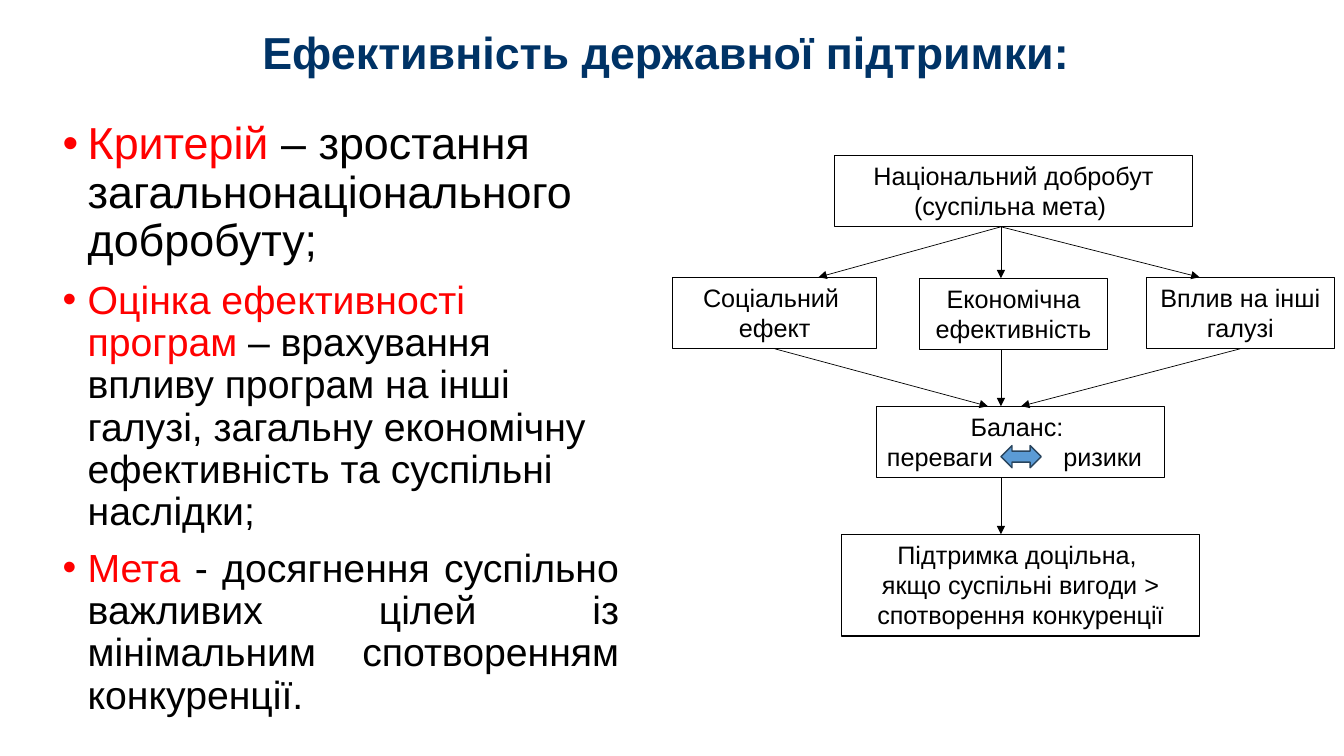
from dataclasses import dataclass

from lxml import etree
from pptx import Presentation
from pptx.dml.color import RGBColor
from pptx.enum.shapes import MSO_CONNECTOR, MSO_SHAPE
from pptx.enum.text import MSO_ANCHOR, MSO_AUTO_SIZE, PP_ALIGN
from pptx.oxml.ns import qn
from pptx.util import Inches, Pt

LEFT, CENTER, JUSTIFY = PP_ALIGN.LEFT, PP_ALIGN.CENTER, PP_ALIGN.JUSTIFY
TOP, MIDDLE = MSO_ANCHOR.TOP, MSO_ANCHOR.MIDDLE
RECTANGLE, DOUBLE_ARROW = MSO_SHAPE.RECTANGLE, MSO_SHAPE.LEFT_RIGHT_ARROW
STRAIGHT = MSO_CONNECTOR.STRAIGHT
FIXED_SIZE = MSO_AUTO_SIZE.NONE

FONT = "Arial"
NAVY, RED, BLACK = "003366", "FF0000", "000000"
BLUE, DARK_BLUE = "5B9BD5", "28445D"

# The grid has square cells, ten to the inch.
COLUMNS, ROWS = 133.33, 75
SPINE = 99.3


@dataclass(frozen=True)
class Area:
    column: float
    row: float
    width: float
    height: float

    @property
    def bottom(self) -> float:
        return self.row + self.height

    @property
    def middle(self) -> float:
        return self.column + self.width / 2


@dataclass(frozen=True)
class Line:
    text: str
    align: PP_ALIGN = CENTER
    tab: float = 0


@dataclass(frozen=True)
class Box:
    area: Area
    lines: tuple[Line, ...]


@dataclass(frozen=True)
class Point:
    lead: str
    rest: str
    size: int
    align: PP_ALIGN = LEFT


@dataclass(frozen=True)
class Arrow:
    start: float
    source: Box
    end: float
    target: Box


WELFARE = Box(Area(82.8, 15.4, 35.5, 7.1),
              (Line("Національний добробут (суспільна мета) "),))
SOCIAL = Box(Area(66.7, 27.5, 20.3, 7.1), (Line("Соціальний "), Line("ефект")))
ECONOMIC = Box(Area(91.2, 27.6, 18.7, 7.1), (Line("Економічна ефективність"),))
SECTORS = Box(Area(113.7, 27.5, 18.7, 7.1), (Line("Вплив на інші галузі"),))
BALANCE = Box(Area(87, 40.3, 28.5, 7.1),
              (Line("Баланс: "), Line("переваги\tризики", LEFT, tab=17.5)))
DECISION = Box(Area(83.5, 53, 35.5, 10.1),
               (Line("Підтримка доцільна, "),
                Line("якщо суспільні вигоди > спотворення конкуренції")))
BOXES = (WELFARE, SOCIAL, ECONOMIC, SECTORS, BALANCE, DECISION)

ARROWS = (
    Arrow(SPINE, WELFARE, SPINE, ECONOMIC),
    Arrow(SPINE, WELFARE, 81.2, SOCIAL),
    Arrow(SPINE, WELFARE, 119, SECTORS),
    Arrow(SPINE, ECONOMIC, SPINE, BALANCE),
    Arrow(SECTORS.area.middle, SECTORS, 101.3, BALANCE),
    Arrow(SOCIAL.area.middle, SOCIAL, 98, BALANCE),
    Arrow(SPINE, BALANCE, SPINE, DECISION),
)

POINTS = (
    Point("Критерій", " – зростання загальнонаціонального добробуту;", 32),
    Point("Оцінка ефективності програм ",
          "– врахування впливу програм на інші галузі, загальну економічну "
          "ефективність та суспільні наслідки;", 28),
    Point("Мета", " - досягнення суспільно важливих цілей із мінімальним "
          "спотворенням конкуренції.", 28, JUSTIFY),
)


def cells(count: float) -> int:
    return Inches(count / 10)


def color(value: str) -> RGBColor:
    return RGBColor.from_string(value)


def add_text(para, text: str, *, size: int, ink: str = BLACK, bold: bool = False) -> None:
    span = para.add_run()
    span.text = text
    span.font.name = FONT
    span.font.size = Pt(size)
    span.font.bold = bold
    span.font.color.rgb = color(ink)


def place(shape, area: Area) -> None:
    shape.left, shape.top = cells(area.column), cells(area.row)
    shape.width, shape.height = cells(area.width), cells(area.height)


def prepare_frame(shape, anchor: MSO_ANCHOR):
    frame = shape.text_frame
    frame.word_wrap = True
    frame.auto_size = FIXED_SIZE
    frame.vertical_anchor = anchor
    return frame


def next_paragraph(frame, index: int):
    return frame.add_paragraph() if index else frame.paragraphs[0]


def set_bullet(para) -> None:
    properties = para._p.get_or_add_pPr()
    properties.set("marL", str(Inches(0.25)))
    properties.set("indent", str(-Inches(0.25)))
    etree.SubElement(properties, qn("a:buFont"), typeface=FONT)
    etree.SubElement(properties, qn("a:buChar"), char="•")


def set_tab(para, position: float) -> None:
    tabs = etree.SubElement(para._p.get_or_add_pPr(), qn("a:tabLst"))
    etree.SubElement(tabs, qn("a:tab"), pos=str(cells(position)), algn="l")


def fill_title(page) -> None:
    title = page.shapes.title
    place(title, Area(9.2, 1.5, 115, 7.9))
    para = prepare_frame(title, MIDDLE).paragraphs[0]
    para.alignment = CENTER
    para.line_spacing = 0.9
    add_text(para, "Ефективність державної підтримки: ", size=32, ink=NAVY, bold=True)


def fill_body(page) -> None:
    body = page.placeholders[1]
    place(body, Area(5.2, 11.5, 57.2, 62))
    frame = prepare_frame(body, TOP)
    for index, point in enumerate(POINTS):
        para = next_paragraph(frame, index)
        para.alignment = point.align
        para.line_spacing = 0.9
        para.space_before = Pt(10)
        set_bullet(para)
        add_text(para, point.lead, size=point.size, ink=RED)
        add_text(para, point.rest, size=point.size)


def add_outlined(page, kind: MSO_SHAPE, area: Area, *, line: str, weight: float):
    shape = page.shapes.add_shape(kind, 0, 0, 0, 0)
    place(shape, area)
    shape.shadow.inherit = False
    shape.fill.background()
    shape.line.color.rgb = color(line)
    shape.line.width = Pt(weight)
    return shape


def draw_box(page, box: Box) -> None:
    shape = add_outlined(page, RECTANGLE, box.area, line=BLACK, weight=0.75)
    frame = prepare_frame(shape, TOP)
    for index, line in enumerate(box.lines):
        para = next_paragraph(frame, index)
        para.alignment = line.align
        if line.tab:
            set_tab(para, line.tab)
        add_text(para, line.text, size=18)


def draw_arrow(page, arrow: Arrow) -> None:
    """Link the bottom edge of the source box to the top edge of the target."""
    connector = page.shapes.add_connector(
        STRAIGHT, cells(arrow.start), cells(arrow.source.area.bottom),
        cells(arrow.end), cells(arrow.target.area.row))
    connector.line.color.rgb = color(BLACK)
    connector.line.width = Pt(0.5)
    etree.SubElement(connector.line._get_or_add_ln(), qn("a:tailEnd"), type="triangle")
    etree.SubElement(connector._element.spPr, qn("a:effectLst"))


def main() -> None:
    deck = Presentation()
    deck.slide_width, deck.slide_height = cells(COLUMNS), cells(ROWS)
    page = deck.slides.add_slide(deck.slide_layouts[1])
    fill_title(page)
    fill_body(page)
    for box in BOXES:
        draw_box(page, box)
    exchange = add_outlined(page, DOUBLE_ARROW, Area(SPINE, 44.2, 4, 2.2),
                            line=DARK_BLUE, weight=1)
    exchange.fill.solid()
    exchange.fill.fore_color.rgb = color(BLUE)
    for arrow in ARROWS:
        draw_arrow(page, arrow)
    deck.save("out.pptx")


if __name__ == "__main__":
    main()
